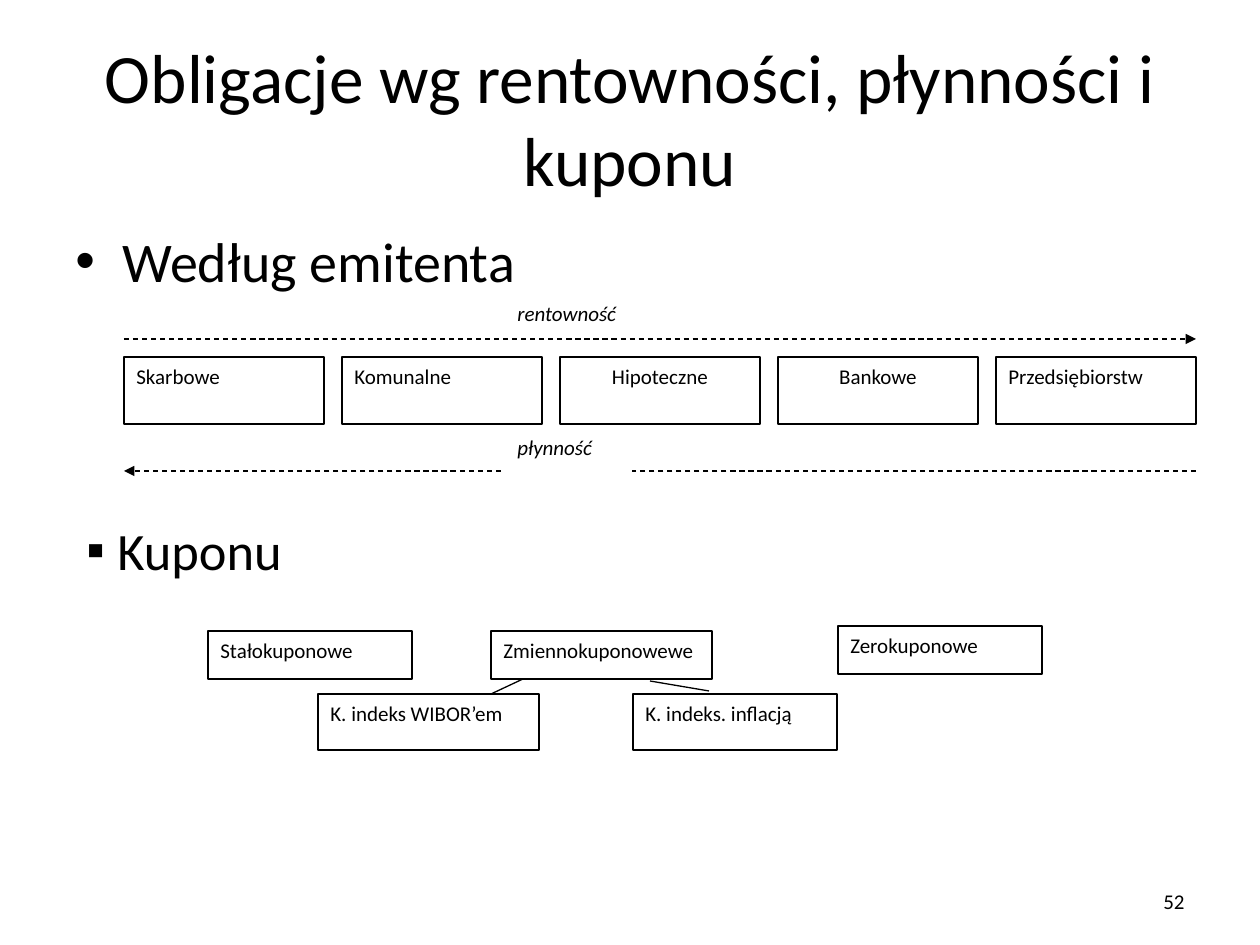
from lxml.etree import SubElement
from pptx import Presentation
from pptx.dml.color import RGBColor
from pptx.enum.dml import MSO_LINE
from pptx.enum.shapes import MSO_CONNECTOR, MSO_SHAPE
from pptx.enum.text import MSO_ANCHOR, PP_ALIGN
from pptx.oxml.ns import qn
from pptx.util import Emu, Pt

PX = 914400 / 126
LEFT, CENTER, RIGHT = PP_ALIGN.LEFT, PP_ALIGN.CENTER, PP_ALIGN.RIGHT
BLACK, WHITE = "000000", "FFFFFF"


def px(value):
    return Emu(round(value * PX))


def color(value):
    return RGBColor.from_string(value)


def write(shape, text, size=12, align=LEFT, anchor=MSO_ANCHOR.TOP, italic=False):
    frame = shape.text_frame
    frame.word_wrap = True
    frame.vertical_anchor = anchor
    paragraph = frame.paragraphs[0]
    paragraph.alignment = align
    run = paragraph.add_run()
    run.text = text
    font = run.font
    font.name, font.size, font.italic = "Calibri", Pt(size), italic
    font.color.rgb = color(BLACK)
    return paragraph


def add_text(slide, bounds, text, size, **style):
    shape = slide.shapes.add_textbox(*map(px, bounds))
    return write(shape, text, size, **style)


def add_bullet(slide, bounds, text, size, character, indent):
    """Add a bulleted line with a hanging indent in px."""
    paragraph = add_text(slide, bounds, text, size)
    properties = paragraph._p.get_or_add_pPr()
    properties.set("marL", str(px(indent)))
    properties.set("indent", str(px(-indent)))
    SubElement(properties, qn("a:buFont"), typeface="Arial")
    SubElement(properties, qn("a:buChar"), char=character)


def add_box(slide, bounds, text, outlined=True, **style):
    shape = slide.shapes.add_shape(MSO_SHAPE.RECTANGLE, *map(px, bounds))
    shape.shadow.inherit = False
    shape.fill.solid()
    shape.fill.fore_color.rgb = color(WHITE)
    if outlined:
        shape.line.color.rgb = color(BLACK)
        shape.line.width = Pt(0.75)
    else:
        shape.line.fill.background()
    write(shape, text, **style)


def add_line(slide, points):
    line = slide.shapes.add_connector(MSO_CONNECTOR.STRAIGHT, *map(px, points))
    line.line.color.rgb = color(BLACK)
    line.line.width = Pt(0.75)
    SubElement(line._element.spPr, qn("a:effectLst"))
    return line


def add_dashed_arrow(slide, points):
    line = add_line(slide, points).line
    line.dash_style = MSO_LINE.DASH
    SubElement(line._get_or_add_ln(), qn("a:tailEnd"), type="triangle")


def add_issuer_scale(slide):
    left, right, width = 124, 1196, 200
    issuers = [("Skarbowe", LEFT), ("Komunalne", LEFT), ("Hipoteczne", CENTER),
               ("Bankowe", CENTER), ("Przedsiębiorstw", LEFT)]
    step = (right - left - width) / (len(issuers) - 1)
    for index, (issuer, align) in enumerate(issuers):
        add_box(slide, (left + index * step, 357, width, 67), issuer, align=align)
    add_dashed_arrow(slide, (left, 339, right, 339))
    add_dashed_arrow(slide, (right, 471, left, 471))
    add_box(slide, (505, 428, 127, 44), "płynność", outlined=False, italic=True)
    add_box(slide, (505, 294, 164, 44), "rentowność", outlined=False, italic=True)


def add_coupon_tree(slide):
    boxes = [
        ("Stałokuponowe", (208, 631, 204, 48)),
        ("Zmiennokuponowewe", (491, 631, 221, 48)),
        ("Zerokuponowe", (838, 626, 204, 48)),
        ("K. indeks WIBOR’em", (318, 694, 221, 56)),
        ("K. indeks. inflacją", (633, 694, 204, 56)),
    ]
    for text, bounds in boxes:
        add_box(slide, bounds, text)
    add_line(slide, (523, 679, 491, 694))
    add_line(slide, (650, 681, 709, 691))


def main():
    presentation = Presentation()
    presentation.slide_width, presentation.slide_height = px(1260), px(945)
    slide = presentation.slides.add_slide(presentation.slide_layouts[6])
    add_text(slide, (63, 38, 1134, 158), "Obligacje wg rentowności, płynności i kuponu",
             39.6, align=CENTER, anchor=MSO_ANCHOR.MIDDLE)
    add_bullet(slide, (63, 220, 1134, 624), "Według emitenta", 32, "•", 47)
    add_text(slide, (903, 876, 294, 50), "52", 12, align=RIGHT, anchor=MSO_ANCHOR.MIDDLE)
    add_issuer_scale(slide)
    add_bullet(slide, (74, 512, 1131, 76), "Kuponu", 30, "▪", 31)
    add_coupon_tree(slide)
    presentation.save("out.pptx")


if __name__ == "__main__":
    main()
